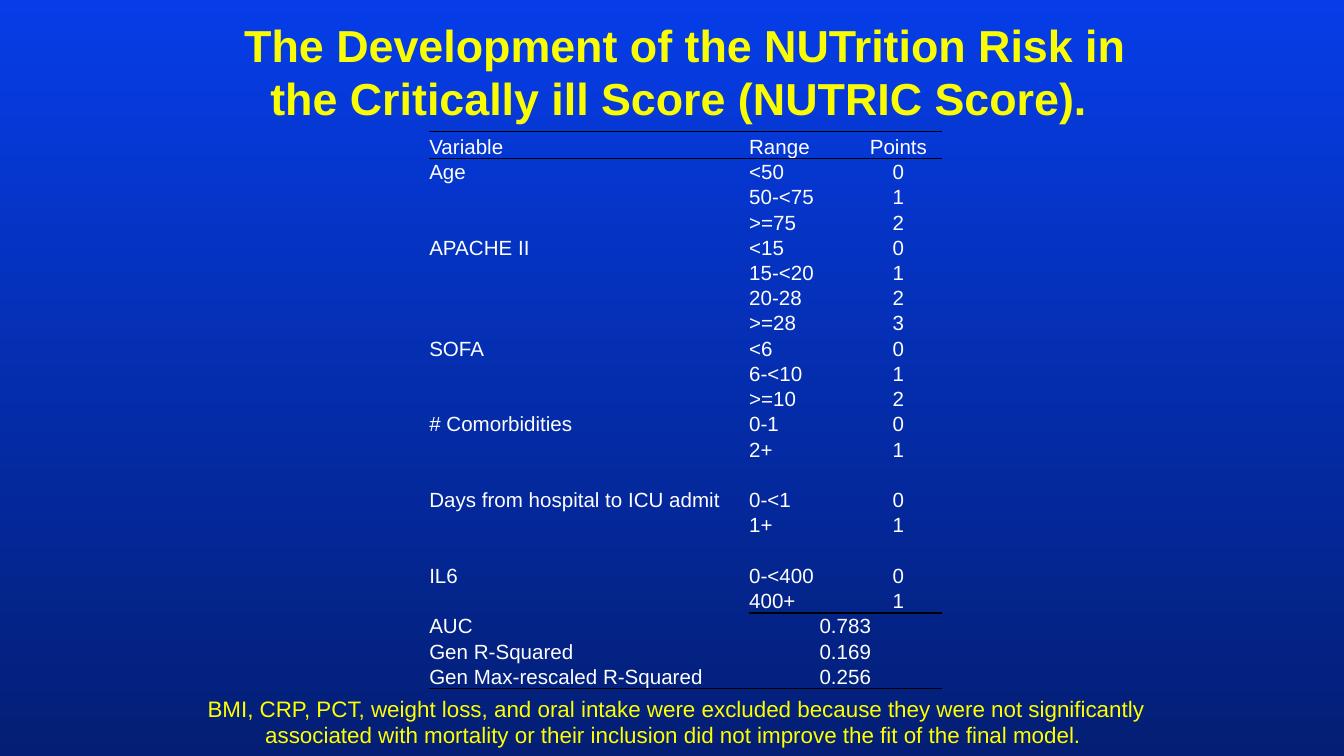
from lxml import etree
from pptx import Presentation
from pptx.dml.color import RGBColor
from pptx.enum.text import MSO_ANCHOR, PP_ALIGN
from pptx.oxml.ns import qn
from pptx.util import Inches, Pt

LEFT, CENTER = PP_ALIGN.LEFT, PP_ALIGN.CENTER
TOP, MIDDLE, BOTTOM = MSO_ANCHOR.TOP, MSO_ANCHOR.MIDDLE, MSO_ANCHOR.BOTTOM

SKY = RGBColor(0x06, 0x3D, 0xE8)
NAVY = RGBColor(0x03, 0x1E, 0x74)
TITLE_YELLOW = RGBColor(0xFA, 0xFD, 0x00)
NOTE_YELLOW = RGBColor(0xFF, 0xFF, 0x00)
WHITE = RGBColor(0xFF, 0xFF, 0xFF)
RULE_COLOR = RGBColor(0x00, 0x00, 0x00)
FONT = "Arial"
PLAIN_TABLE_STYLE = "{2D5ABB26-0587-4C30-8999-92F81FD0307C}"

# Content
TITLE = "The Development of the NUTrition Risk in the Critically ill Score (NUTRIC Score). "
FOOTNOTE = (
    "BMI, CRP, PCT, weight loss, and oral intake were excluded because they were not "
    "significantly associated with mortality or their inclusion did not improve the "
    "fit of the final model. "
)
HEADER = ("Variable", "Range", "Points")
# Each variable's ranges score 0, 1, 2, ... points; the flag leaves a gap row below
VARIABLES = [
    ("Age", ["<50", "50-<75", ">=75"], False),
    ("APACHE II", ["<15", "15-<20", "20-28", ">=28"], False),
    ("SOFA", ["<6", "6-<10", ">=10"], False),
    ("# Comorbidities", ["0-1", "2+"], True),
    ("Days from hospital to ICU admit", ["0-<1", "1+"], True),
    ("IL6", ["0-<400", "400+"], False),
]
FIT = [("AUC", "0.783"), ("Gen R-Squared", "0.169"), ("Gen Max-rescaled R-Squared", "0.256")]

COLUMN_WIDTHS = (2.38, 0.79, 0.65)
COLUMN_ALIGNS = (LEFT, LEFT, CENTER)
HEADER_HEIGHT, ROW_HEIGHT = 0.2, 0.18
CELL_INSET = Pt(0.3)
CELL_SIZE = 11


def format_text(frame, size, color, align, bold=False):
    paragraph = frame.paragraphs[0]
    paragraph.alignment = align
    for run in paragraph.runs:
        run.font.name, run.font.size, run.font.bold = FONT, Pt(size), bold
        run.font.color.rgb = color


def add_text(slide, box, text, size, color, anchor, bold=False):
    frame = slide.shapes.add_textbox(*(Inches(v) for v in box)).text_frame
    frame.word_wrap = True
    frame.vertical_anchor = anchor
    frame.text = text
    format_text(frame, size, color, CENTER, bold)


def set_borders(cell, ruled_sides):
    properties = cell._tc.get_or_add_tcPr()
    for side in ("lnL", "lnR", "lnT", "lnB"):
        line = etree.SubElement(properties, qn(f"a:{side}"), w=str(Pt(1)))
        if side in ruled_sides:
            fill = etree.SubElement(line, qn("a:solidFill"))
            etree.SubElement(fill, qn("a:srgbClr"), val=str(RULE_COLOR))
        else:
            etree.SubElement(line, qn("a:noFill"))


def fill_cell(cell, text, align):
    cell.margin_left = cell.margin_right = cell.margin_top = CELL_INSET
    cell.margin_bottom = 0
    cell.vertical_anchor = BOTTOM
    cell.text = text
    format_text(cell.text_frame, CELL_SIZE, WHITE, align)
    if not text:  # keeps empty rows as low as the others
        paragraph = cell.text_frame.paragraphs[0]._p
        ending = etree.SubElement(paragraph, qn("a:endParaRPr"), sz=str(CELL_SIZE * 100))
        etree.SubElement(ending, qn("a:latin"), typeface=FONT)
    cell.fill.background()


def score_rows():
    rows = [HEADER]
    for variable, ranges, gap_below in VARIABLES:
        for points, limits in enumerate(ranges):
            rows.append((variable if points == 0 else "", limits, str(points)))
        if gap_below:
            rows.append(("", "", ""))
    return rows


def add_score_table(slide, left, top):
    scores = score_rows()
    rows = scores + [(name, value, "") for name, value in FIT]
    heights = [HEADER_HEIGHT] + [ROW_HEIGHT] * (len(rows) - 1)
    table = slide.shapes.add_table(
        len(rows), len(HEADER), Inches(left), Inches(top),
        Inches(sum(COLUMN_WIDTHS)), Inches(sum(heights)),
    ).table
    table.first_row = table.horz_banding = False
    table._tbl.tblPr.find(qn("a:tableStyleId")).text = PLAIN_TABLE_STYLE
    for column, width in zip(table.columns, COLUMN_WIDTHS):
        column.width = Inches(width)
    for row, height in zip(table.rows, heights):
        row.height = Inches(height)

    # Rules: around the header, under the scores (not the names), at the foot
    first_fit, last = len(scores), len(rows) - 1
    rules = {0: ("lnT", "lnB"), 1: ("lnT",), last: ("lnB",)}
    score_end_rules = {first_fit - 1: ("lnB",), first_fit: ("lnT",)}

    for r, texts in enumerate(rows):
        is_fit = r >= first_fit
        for c, text in enumerate(texts):
            cell = table.cell(r, c)
            set_borders(cell, rules.get(r, ()) + (score_end_rules.get(r, ()) if c else ()))
            fill_cell(cell, text, CENTER if is_fit and c else COLUMN_ALIGNS[c])
        if is_fit:
            table.cell(r, 1).merge(table.cell(r, 2))


def main():
    prs = Presentation()
    prs.slide_width = Inches(10)
    prs.slide_height = prs.slide_width * 9 // 16
    slide = prs.slides.add_slide(prs.slide_layouts[6])

    # Background, light at the top
    backdrop = slide.background.fill
    backdrop.gradient()
    backdrop.gradient_angle = 270
    for stop, color, position in zip(backdrop.gradient_stops, (SKY, NAVY), (0, 1)):
        stop.color.rgb = color
        stop.position = position

    # Title, score table and footnote
    add_text(slide, (1.69, 0.06, 6.81, 0.94), TITLE, 24, TITLE_YELLOW, MIDDLE, bold=True)
    add_score_table(slide, 3.19, 0.98)
    add_text(slide, (1.38, 5.12, 7.31, 0.5), FOOTNOTE, 12, NOTE_YELLOW, TOP)
    prs.save("out.pptx")


if __name__ == "__main__":
    main()
